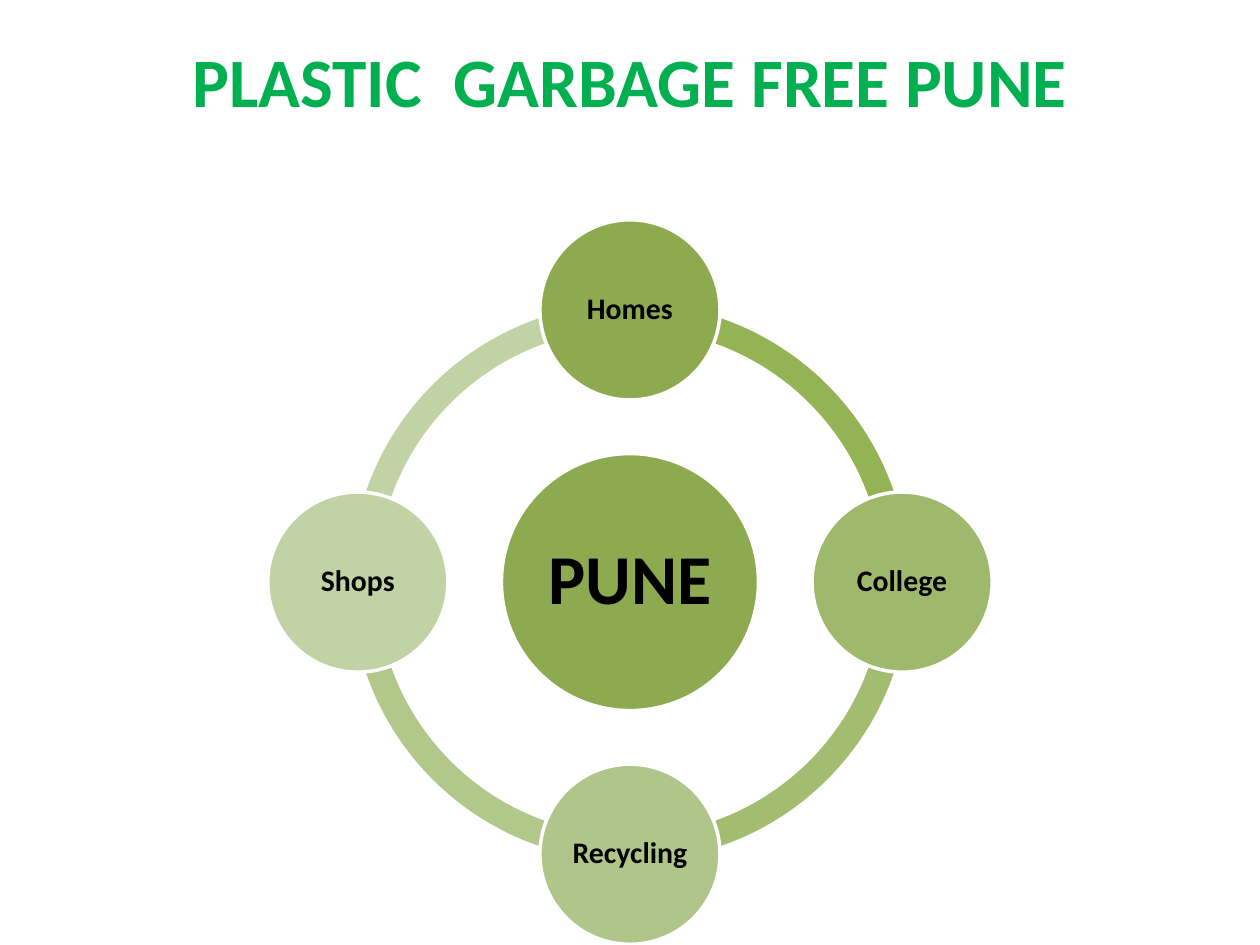
from math import cos, radians, sin

from pptx import Presentation
from pptx.dml.color import RGBColor
from pptx.enum.shapes import MSO_SHAPE
from pptx.enum.text import MSO_ANCHOR, PP_ALIGN
from pptx.util import Inches, Pt

COLORS = {
    "title": "00B050", "text": "000000", "edge": "FFFFFF", "hub": "8DAA51",
    "homes": "8DAA51", "college": "9EB86C", "recycling": "AFC589", "shops": "C1D3A5",
    "arc1": "94B355", "arc2": "A2BD70", "arc3": "B1C88A", "arc4": "C1D3A4",
}
CX, CY = 5, 4.62
ORBIT = 2.16
ARC_UNITS_PER_DEGREE = 0.6
STOPS = [
    ("Homes", "homes", "arc1"),
    ("College", "college", "arc2"),
    ("Recycling", "recycling", "arc3"),
    ("Shops", "shops", "arc4"),
]


class Deck:
    """Holds the style and the current slide, and draws each kind of element."""

    font = "Calibri"

    def __init__(self, prs):
        self.slide = prs.slides.add_slide(prs.slide_layouts[5])

    def color(self, name):
        return RGBColor.from_string(COLORS[name])

    def add_text(self, tf, text, size, color):
        p = tf.paragraphs[0]
        p.alignment = PP_ALIGN.CENTER
        r = p.add_run()
        r.text = text
        r.font.name = self.font
        r.font.size = Pt(size)
        r.font.bold = True
        r.font.color.rgb = self.color(color)
        return p

    def title(self, text):
        sp = self.slide.shapes.title
        sp.left, sp.top = Inches(0.5), Inches(0.3)
        sp.width, sp.height = Inches(9), Inches(1.25)
        tf = sp.text_frame
        tf.vertical_anchor = MSO_ANCHOR.TOP
        tf.margin_top = 0
        self.add_text(tf, text, 39.6, "title")

    def shape(self, kind, x, y, size, fill):
        sp = self.slide.shapes.add_shape(
            kind, Inches(x - size / 2), Inches(y - size / 2), Inches(size), Inches(size))
        sp.shadow.inherit = False
        sp.fill.solid()
        sp.fill.fore_color.rgb = self.color(fill)
        sp.line.fill.background()
        return sp

    def arc(self, start, end, fill):
        sp = self.shape(MSO_SHAPE.BLOCK_ARC, CX, CY, 4.43, fill)
        sp.adjustments[0] = start * ARC_UNITS_PER_DEGREE
        sp.adjustments[1] = end * ARC_UNITS_PER_DEGREE
        sp.adjustments[2] = 0.046

    def circle(self, x, y, size, fill, text, text_size, inset):
        sp = self.shape(MSO_SHAPE.OVAL, x, y, size, fill)
        sp.line.color.rgb = self.color("edge")
        sp.line.width = Pt(2)
        tf = sp.text_frame
        tf.word_wrap = True
        tf.vertical_anchor = MSO_ANCHOR.MIDDLE
        tf.margin_left = tf.margin_right = Inches(inset)
        tf.margin_top = tf.margin_bottom = Inches(inset)
        self.add_text(tf, text, text_size, "text").line_spacing = 0.9


def main():
    prs = Presentation()
    prs.slide_width, prs.slide_height = Inches(10), Inches(7.5)
    deck = Deck(prs)
    deck.title("PLASTIC  GARBAGE FREE PUNE")

    angles = [(270 + 90 * i) % 360 for i in range(len(STOPS))]
    for angle, (_, _, arc) in reversed(list(zip(angles, STOPS))):
        deck.arc(angle, (angle + 90) % 360, arc)

    deck.circle(CX, CY, 2.04, "hub", "PUNE", 40, 0.06)
    for angle, (name, fill, _) in zip(angles, STOPS):
        x = CX + ORBIT * cos(radians(angle))
        y = CY + ORBIT * sin(radians(angle))
        deck.circle(x, y, 1.43, fill, name, 17, 0.02)

    prs.save("out.pptx")


if __name__ == "__main__":
    main()
